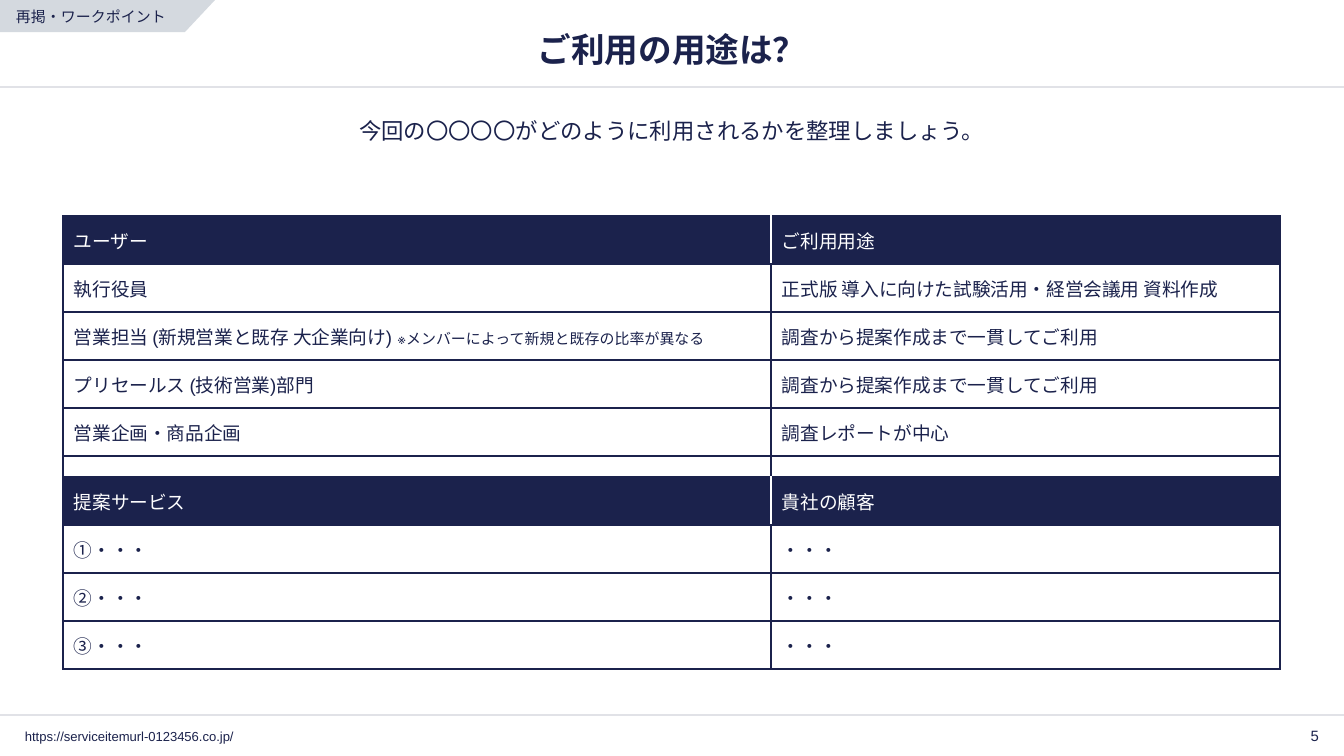
from lxml import etree
from pptx import Presentation
from pptx.dml.color import RGBColor
from pptx.enum.shapes import MSO_CONNECTOR
from pptx.enum.text import MSO_ANCHOR, MSO_AUTO_SIZE, PP_ALIGN
from pptx.oxml.ns import qn
from pptx.util import Pt

PX = 9144000 / 1344  # EMU in one px
NAVY = RGBColor(0x1B, 0x22, 0x4C)
WHITE = RGBColor(0xFF, 0xFF, 0xFF)
TAG_GREY = RGBColor(0xD4, 0xD9, 0xDF)
STRAIGHT = MSO_CONNECTOR.STRAIGHT
MIDDLE, TOP = MSO_ANCHOR.MIDDLE, MSO_ANCHOR.TOP
LEFT, CENTER, RIGHT = PP_ALIGN.LEFT, PP_ALIGN.CENTER, PP_ALIGN.RIGHT
ROW_HEIGHT, SPACER_HEIGHT = 48, 21
COLUMN_WIDTHS = (708, 509)


def emu(*lengths):
    return [round(length * PX) for length in lengths]


def write(frame, text, size, align=LEFT, anchor=MIDDLE, bold=False, insets=(5, 5, 5, 5)):
    frame.word_wrap = True
    frame.auto_size = MSO_AUTO_SIZE.NONE
    frame.vertical_anchor = anchor
    (frame.margin_left, frame.margin_top,
     frame.margin_right, frame.margin_bottom) = emu(*insets)
    frame.text = text
    paragraph = frame.paragraphs[0]
    paragraph.alignment = align
    paragraph.space_before = Pt(0)
    paragraph.font.name = "Arial"
    paragraph.font.size = Pt(size)
    paragraph.font.bold = bold
    paragraph.font.color.rgb = NAVY
    return paragraph


presentation = Presentation()
presentation.slide_width, presentation.slide_height = emu(1344, 756)
slide = presentation.slides.add_slide(presentation.slide_layouts[1])
shapes = slide.shapes

# Header and footer rules, at 20 % opacity
for y in (87, 715):
    rule = shapes.add_connector(STRAIGHT, *emu(0, y, 1344, y))
    rule.line.width = Pt(0.75)
    rule.line.color.rgb = NAVY
    color = rule.line._ln.find(".//" + qn("a:srgbClr"))
    etree.SubElement(color, qn("a:alpha"), val="20000")
    etree.SubElement(rule._element.spPr, qn("a:effectLst"))

# Title and lead sentence
title, lead = shapes.title, slide.placeholders[1]
title.left, title.top, title.width, title.height = emu(63, 23, 1218, 53)
write(title.text_frame, "ご利用の用途は？", 18, CENTER, bold=True)
lead.left, lead.top, lead.width, lead.height = emu(63, 112, 1218, 69)
paragraph = write(lead.text_frame, "今回の〇〇〇〇がどのように利用されるかを整理しましょう。", 12, CENTER, TOP)
properties = paragraph._p.get_or_add_pPr()
properties.set("marL", "0")
properties.set("indent", "0")
etree.SubElement(properties, qn("a:buNone"))

# Footer: address and page number
for text, size, align, box in (
    ("https://serviceitemurl-0123456.co.jp/", 7, LEFT, (20, 723, 476, 27)),
    ("5", 8, RIGHT, (1271, 722, 53, 27)),
):
    write(shapes.add_textbox(*emu(*box)).text_frame, text, size, align)

# Tables: top, rows (the first is the header); a cell may carry a small note,
# and a row of cells without text is a thin spacer
tables = (
    (216, (
        (("ユーザー",), ("ご利用用途",)),
        (("執行役員",), ("正式版 導入に向けた試験活用・経営会議用 資料作成",)),
        (("営業担当 (新規営業と既存 大企業向け) ", "※メンバーによって新規と既存の比率が異なる"),
         ("調査から提案作成まで一貫してご利用",)),
        (("プリセールス (技術営業)部門",), ("調査から提案作成まで一貫してご利用",)),
        (("営業企画・商品企画",), ("調査レポートが中心",)),
        ((), ()),
    )),
    (477, (
        (("提案サービス",), ("貴社の顧客",)),
        (("①・・・",), ("・・・",)),
        (("②・・・",), ("・・・",)),
        (("③・・・",), ("・・・",)),
    )),
)
for top, rows in tables:
    heights = [ROW_HEIGHT if any(row) else SPACER_HEIGHT for row in rows]
    frame = shapes.add_table(
        len(rows), 2, *emu(63, top, sum(COLUMN_WIDTHS), sum(heights)))
    table = frame.table
    table.first_row = table.horz_banding = False
    for column, width in zip(table.columns, emu(*COLUMN_WIDTHS)):
        column.width = width
    for row_index, row in enumerate(rows):
        table.rows[row_index].height = emu(heights[row_index])[0]
        is_header = row_index == 0
        for column_index, texts in enumerate(row):
            cell = table.cell(row_index, column_index)
            cell.vertical_anchor = MIDDLE
            inset = 10 if texts else 0
            (cell.margin_left, cell.margin_top,
             cell.margin_right, cell.margin_bottom) = emu(11, inset, 11, inset)

            paragraph = cell.text_frame.paragraphs[0]
            paragraph.font.name = "Arial"
            paragraph.font.size = Pt(10 if texts else 6)
            paragraph.font.color.rgb = WHITE if is_header else NAVY
            for text_index, text in enumerate(texts):
                run = paragraph.add_run()
                run.text = text
                if text_index > 0:
                    run.font.size = Pt(8)
            if not texts:
                etree.SubElement(paragraph._p, qn("a:endParaRPr"), sz="600")

            # Borders are navy, with a white divider inside the header
            divider = "lnR" if column_index == 0 else "lnL"
            cell_properties = cell._tc.get_or_add_tcPr()
            for side in ("lnL", "lnR", "lnT", "lnB"):
                border = etree.SubElement(cell_properties, qn("a:" + side), w=str(Pt(1)))
                fill = etree.SubElement(border, qn("a:solidFill"))
                border_color = WHITE if is_header and side == divider else NAVY
                etree.SubElement(fill, qn("a:srgbClr"), val=str(border_color))
            if is_header:
                cell.fill.solid()
                cell.fill.fore_color.rgb = NAVY
            else:
                cell.fill.background()

# Corner tag
builder = shapes.build_freeform(0, 0, scale=PX)
builder.add_line_segments(((215, 0), (185, 32), (0, 32)), close=True)
tag = builder.convert_to_shape()
tag.shadow.inherit = False
tag.fill.solid()
tag.fill.fore_color.rgb = TAG_GREY
tag.line.fill.background()
write(tag.text_frame, "再掲・ワークポイント", 8, insets=(16, 11, 11, 11))

presentation.save("out.pptx")
